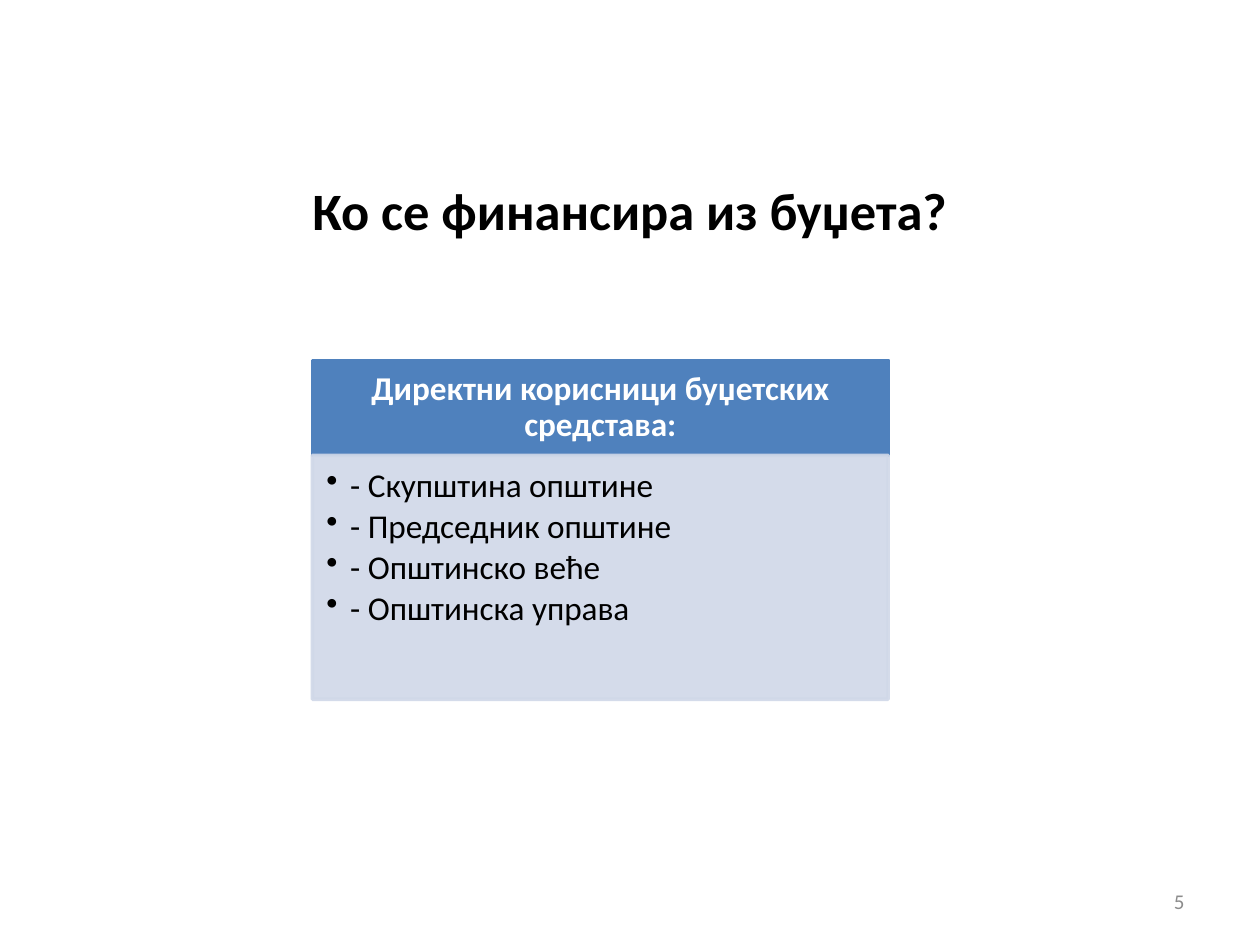
import dataclasses

import lxml.etree
import pptx
import pptx.dml.color
import pptx.enum.shapes
import pptx.enum.text
import pptx.oxml.ns
import pptx.util

ALIGN = pptx.enum.text.PP_ALIGN
ANCHOR = pptx.enum.text.MSO_ANCHOR
WIDE, HIGH = 10, 7.5


@dataclasses.dataclass(frozen=True)
class Theme:
    font: str = "Calibri"
    ink: str = "000000"
    pale: str = "FFFFFF"
    grey: str = "8C8C8C"
    head: str = "4F81BD"
    body: str = "D0D8E8"
    title: int = 30
    text: int = 19
    small: int = 12


THEME = Theme()


def rgb(code):
    return pptx.dml.color.RGBColor.from_string(code)


def inches(*nums):
    return [pptx.util.Inches(num) for num in nums]


def style(para, size, color, align, bold=False):
    para.alignment = align
    font = para.font
    font.name, font.size, font.bold = THEME.font, pptx.util.Pt(size), bold
    font.color.rgb = rgb(color)


def inset(frame, *sides):
    """Set the left, top, right and bottom margins in inches."""
    (frame.margin_left, frame.margin_top,
     frame.margin_right, frame.margin_bottom) = inches(*sides)


def fade(fill, share):
    """Make a solid fill opaque only to the given share."""
    tag = pptx.oxml.ns.qn
    color = fill._xPr.find(tag("a:solidFill"))[0]
    lxml.etree.SubElement(color, tag("a:alpha"), val=str(int(share * 100000)))


def bullet(para, indent):
    props = para._p.get_or_add_pPr()
    props.set("marL", str(pptx.util.Inches(indent)))
    props.set("indent", str(-pptx.util.Inches(indent)))
    lxml.etree.SubElement(props, pptx.oxml.ns.qn("a:buChar"), char="•")


def panel(slide, box, color):
    rect = pptx.enum.shapes.MSO_SHAPE.RECTANGLE
    shape = slide.shapes.add_shape(rect, *inches(*box))
    shape.shadow.inherit = False
    for fill in (shape.fill, shape.line.fill):
        fill.solid()
        fill.fore_color.rgb = rgb(color)
    shape.line.width = pptx.util.Pt(2)
    shape.text_frame.word_wrap = True
    return shape


def heading(slide, box, words):
    title = slide.shapes.title
    title.left, title.top, title.width, title.height = inches(*box)
    title.text_frame.text = words
    title.text_frame.vertical_anchor = ANCHOR.MIDDLE
    style(title.text_frame.paragraphs[0], THEME.title, THEME.ink,
          ALIGN.CENTER, True)


def card(slide, box, head, items):
    """Stack a caption over a bulleted list."""
    left, top, width, height = box
    split = height * 0.28

    frame = panel(slide, (left, top, width, split), THEME.head).text_frame
    inset(frame, 0.15, 0.08, 0.15, 0.08)
    frame.vertical_anchor = ANCHOR.MIDDLE
    frame.text = head
    para = frame.paragraphs[0]
    style(para, THEME.text, THEME.pale, ALIGN.CENTER, True)
    para.line_spacing = 0.9

    base = panel(slide, (left, top + split, width, height - split), THEME.body)
    fade(base.fill, 0.9)
    fade(base.line.fill, 0.9)
    frame = base.text_frame
    inset(frame, 0.11, 0.11, 0.15, 0.17)
    frame.vertical_anchor = ANCHOR.TOP
    frame.text = "\n".join(items)
    for para in frame.paragraphs:
        style(para, THEME.text, THEME.ink, ALIGN.LEFT)
        para.line_spacing = 0.9
        para.space_after = pptx.util.Pt(THEME.text * 0.15)
        bullet(para, 0.19)


def number(slide, box, words):
    frame = slide.shapes.add_textbox(*inches(*box)).text_frame
    frame.word_wrap = True
    frame.vertical_anchor = ANCHOR.MIDDLE
    frame.text = words
    style(frame.paragraphs[0], THEME.small, THEME.grey, ALIGN.RIGHT)


def main():
    deck = pptx.Presentation()
    deck.slide_width, deck.slide_height = inches(WIDE, HIGH)
    slide = deck.slides.add_slide(deck.slide_layouts.get_by_name("Title Only"))
    edge = WIDE * 0.05
    heading(slide, (edge, 1.04, WIDE - 2 * edge, HIGH / 6),
            "Ко се финансира из буџета?")
    card(slide, (2.48, 2.86, 4.57, 2.69),
         "Директни корисници буџетских средстава:",
         ["- Скупштина општине", "- Председник општине",
          "- Општинско веће", "- Општинска управа"])
    wide = WIDE * 7 / 30
    number(slide, (WIDE - edge - wide, 6.95, wide, 0.4), "5")
    deck.save("out.pptx")


if __name__ == "__main__":
    main()
